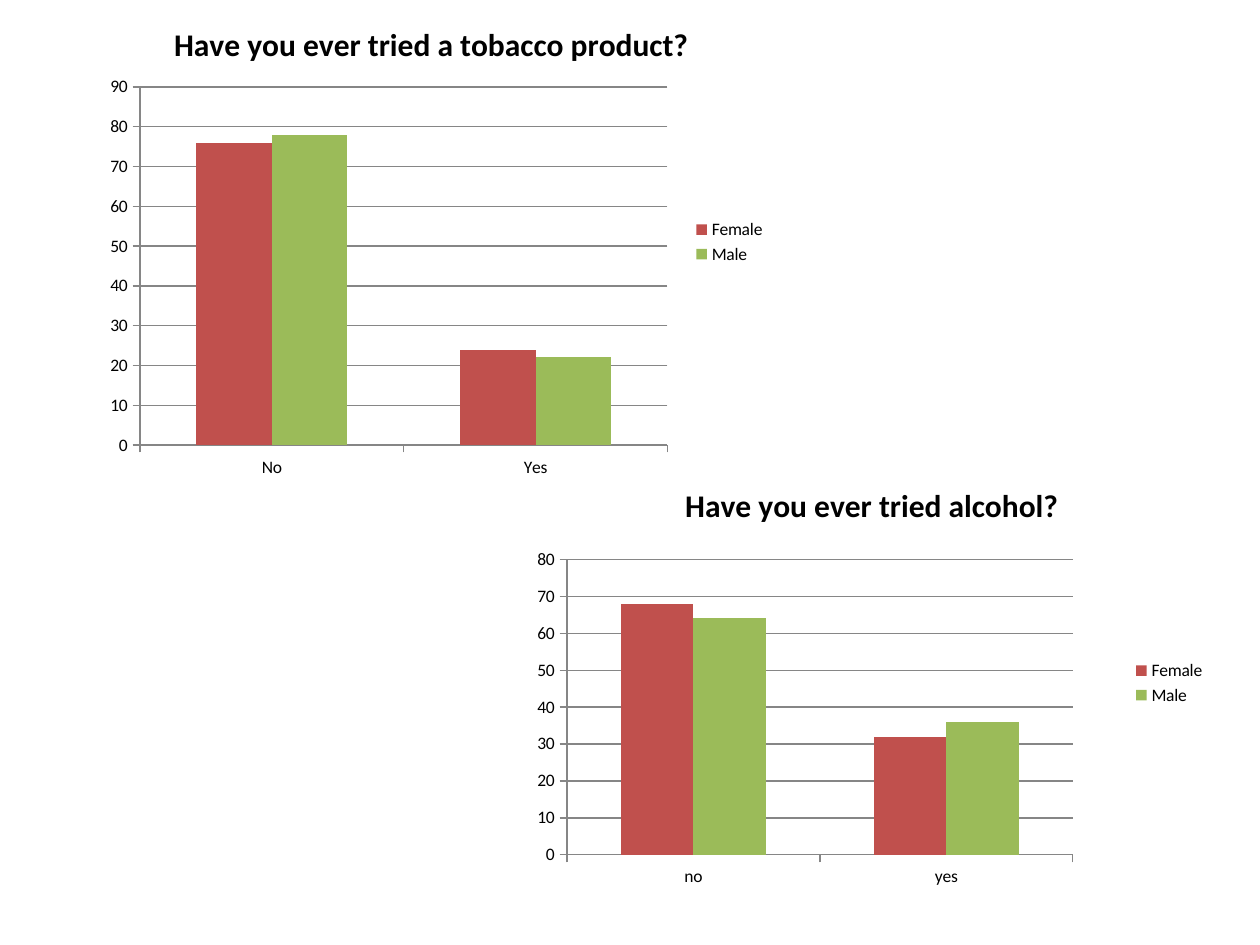
from lxml import etree
from pptx import Presentation
from pptx.chart.data import CategoryChartData
from pptx.dml.color import RGBColor
from pptx.enum.chart import XL_CHART_TYPE, XL_LEGEND_POSITION, XL_TICK_MARK
from pptx.oxml.ns import qn
from pptx.util import Inches, Pt

COLUMN = XL_CHART_TYPE.COLUMN_CLUSTERED
RIGHT = XL_LEGEND_POSITION.RIGHT
OUT, NONE = XL_TICK_MARK.OUTSIDE, XL_TICK_MARK.NONE
FONT = "Calibri"
COLORS = {"Female": "C0504D", "Male": "9BBB59", "text": "000000", "line": "868686"}


def color(name):
    """Return the named colour."""
    return RGBColor.from_string(COLORS[name])


def set_font(font, size, bold=False):
    """Set the face, size, weight and colour of a font."""
    font.name, font.size, font.bold = FONT, Pt(size), bold
    font.color.rgb = color("text")


def set_line(line):
    """Give a line the thin grey style."""
    line.color.rgb = color("line")
    line.width = Pt(0.75)


def set_plot(chart, plot):
    """Fix the inner plot area at fractions x, y, w, h of the chart."""
    area = chart._chartSpace.find(".//" + qn("c:plotArea"))
    for old in area.findall(qn("c:layout")):
        area.remove(old)
    layout = etree.Element(qn("c:layout"))
    manual = etree.SubElement(layout, qn("c:manualLayout"))
    parts = [("layoutTarget", "inner"), ("xMode", "edge"), ("yMode", "edge")]
    for tag, value in parts + list(zip("xywh", plot)):
        etree.SubElement(manual, qn("c:" + tag)).set("val", str(value))
    area.insert(0, layout)


def add_survey(slide, box, title, cats, series, top, plot):
    """Place one survey column chart in the box."""
    data = CategoryChartData()
    data.categories = cats
    for name, values in series.items():
        data.add_series(name, values)
    chart = slide.shapes.add_chart(COLUMN, *map(Inches, box), data).chart
    set_font(chart.font, 10)

    chart.has_title = True
    run = chart.chart_title.text_frame.paragraphs[0].add_run()
    run.text = title
    set_font(run.font, 18, True)
    chart.chart_title.include_in_layout = False

    chart.has_legend = True
    chart.legend.position = RIGHT
    chart.legend.include_in_layout = False

    for axis in (chart.category_axis, chart.value_axis):
        axis.major_tick_mark, axis.minor_tick_mark = OUT, NONE
        set_line(axis.format.line)
    scale = chart.value_axis
    scale.minimum_scale, scale.maximum_scale, scale.major_unit = 0, top, 10
    scale.has_major_gridlines = True
    set_line(scale.major_gridlines.format.line)

    bars = chart.plots[0]
    bars.gap_width, bars.overlap = 150, 0
    bars.vary_by_categories = False
    for item in bars.series:
        item.format.fill.solid()
        item.format.fill.fore_color.rgb = color(item.name)
    set_plot(chart, plot)


def main():
    """Build the slide and save it."""
    deck = Presentation()
    deck.slide_width, deck.slide_height = Inches(10), Inches(7.5)
    slide = deck.slides.add_slide(deck.slide_layouts[6])
    add_survey(slide, (0.67, 0, 5.51, 3.84), "Have you ever tried a tobacco product?",
               ["No", "Yes"], {"Female": (76, 24), "Male": (78, 22)},
               90, (0.08, 0.18, 0.76, 0.74))
    add_survey(slide, (4.17, 3.67, 5.5, 3.5), "Have you ever tried alcohol?",
               ["no", "yes"], {"Female": (68, 32), "Male": (64, 36)},
               80, (0.06, 0.22, 0.73, 0.67))
    deck.save("out.pptx")


if __name__ == "__main__":
    main()
